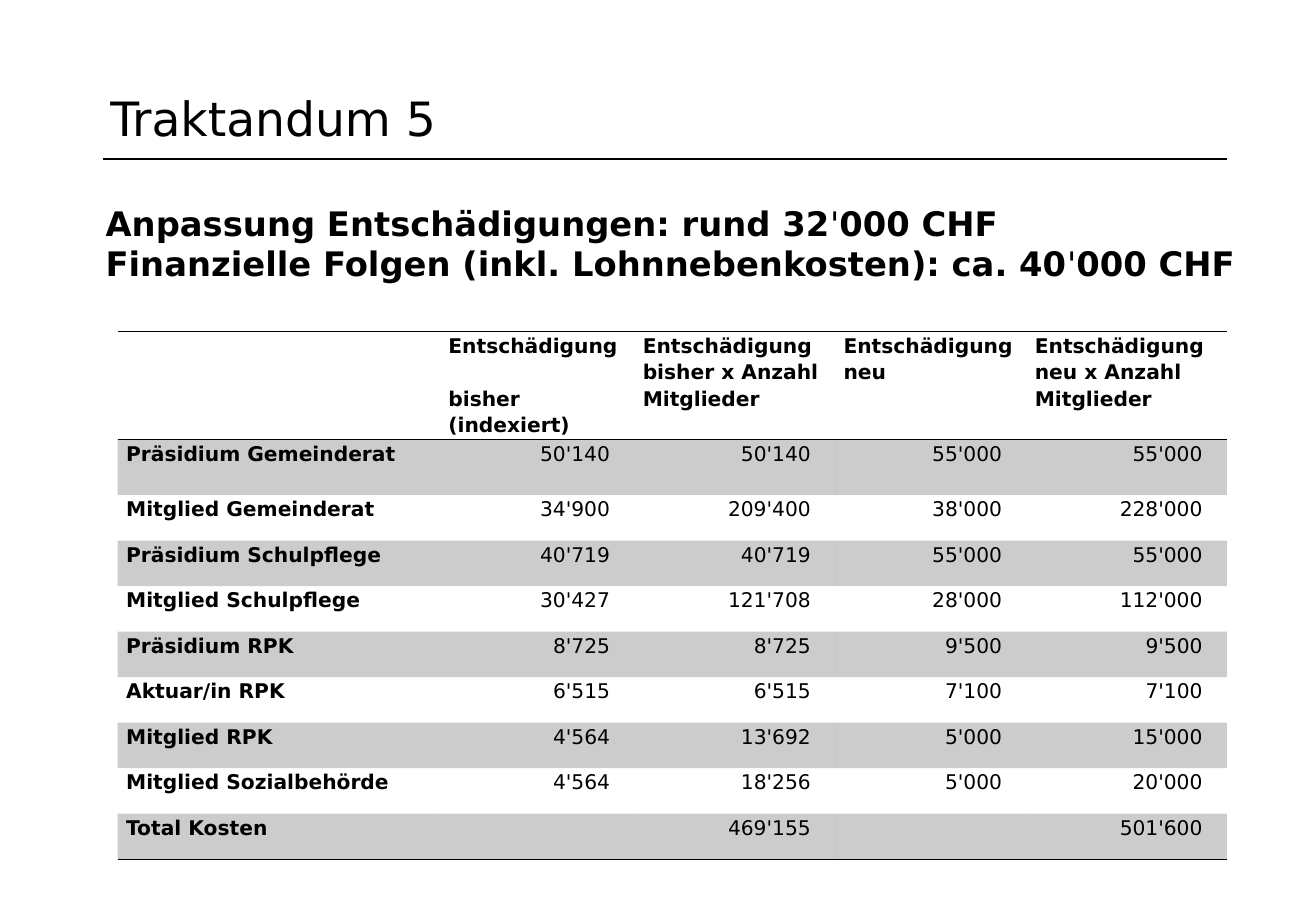
from pptx import Presentation
from pptx.dml.color import RGBColor
from pptx.enum.shapes import MSO_CONNECTOR as CONN
from pptx.enum.text import MSO_ANCHOR as ANCHOR, PP_ALIGN as ALIGN
from pptx.oxml import parse_xml
from pptx.oxml.ns import qn
from pptx.util import Pt
from lxml.etree import SubElement

FONT = "DejaVu Sans"
COLORS = {"ink": "000000", "band": "000000"}
BAND_ALPHA = 20000
NO_STYLE = "{2D5ABB26-0587-4C30-8999-92F81FD0307C}"
NS = "http://schemas.openxmlformats.org/drawingml/2006/main"

COLUMN_WIDTHS = [187.2, 119, 119, 113.4, 118.8]
ROW_HEIGHTS = [62.8, 33] + [27] * 8
HEADERS = [
    [],
    ["Entschädigung", "bisher", "(indexiert)"],
    ["Entschädigung bisher x Anzahl Mitglieder"],
    ["Entschädigung neu"],
    ["Entschädigung neu x Anzahl Mitglieder"],
]
ROWS = [
    ["Präsidium Gemeinderat", "50'140", "50'140", "55'000", "55'000"],
    ["Mitglied Gemeinderat", "34'900", "209'400", "38'000", "228'000"],
    ["Präsidium Schulpflege", "40'719", "40'719", "55'000", "55'000"],
    ["Mitglied Schulpflege", "30'427", "121'708", "28'000", "112'000"],
    ["Präsidium RPK", "8'725", "8'725", "9'500", "9'500"],
    ["Aktuar/in RPK", "6'515", "6'515", "7'100", "7'100"],
    ["Mitglied RPK", "4'564", "13'692", "5'000", "15'000"],
    ["Mitglied Sozialbehörde", "4'564", "18'256", "5'000", "20'000"],
    ["Total Kosten", "", "469'155", "", "501'600"],
]
SUBTITLE = [
    ["Anpassung Entschädigungen: rund 32", "'", "000 CHF"],
    ["Finanzielle Folgen (inkl. Lohnnebenkosten): ca. 40", "'", "000 CHF"],
]


def add_run(p, text, size, bold=False):
    r = p.add_run()
    r.text = text
    r.font.name = FONT
    r.font.size = Pt(size)
    r.font.bold = bold
    r.font.color.rgb = RGBColor.from_string(COLORS["ink"])


def add_text(s, left, top, width, height, lines, size, bold=False, anchor=ANCHOR.TOP):
    """Each line is a list of runs; a lone apostrophe is never bold."""
    tf = s.shapes.add_textbox(Pt(left), Pt(top), Pt(width), Pt(height)).text_frame
    tf.word_wrap = True
    tf.vertical_anchor = anchor
    tf.margin_right = 0
    for i, runs in enumerate(lines):
        p = tf.paragraphs[0] if i == 0 else tf.add_paragraph()
        for text in runs:
            add_run(p, text, size, bold and text != "'")


def add_rule(s, x1, x2, y):
    sp = s.shapes.add_connector(CONN.STRAIGHT, Pt(x1), Pt(y), Pt(x2), Pt(y))
    sp.line.color.rgb = RGBColor.from_string(COLORS["ink"])
    sp.line.width = Pt(0.75)
    SubElement(sp._element.spPr, qn("a:effectLst"))


def add_border(cell, side):
    cell._tc.get_or_add_tcPr().append(parse_xml(
        f'<a:{side} xmlns:a="{NS}" w="{Pt(1)}"><a:solidFill>'
        f'<a:srgbClr val="{COLORS["ink"]}"/></a:solidFill></a:{side}>'))


def fill_cell(cell, banded):
    if not banded:
        cell.fill.background()
        return
    cell.fill.solid()
    cell.fill.fore_color.rgb = RGBColor.from_string(COLORS["band"])
    color = cell._tc.tcPr.find(qn("a:solidFill")).find(qn("a:srgbClr"))
    SubElement(color, qn("a:alpha"), val=str(BAND_ALPHA))


def write_cell(cell, lines, bold, number):
    cell.margin_top = cell.margin_bottom = 0
    cell.margin_left = Pt(8.8 if len(lines) > 1 else 5)
    cell.margin_right = Pt(14.4 if number else 5)
    tf = cell.text_frame
    for i, text in enumerate(lines):
        p = tf.paragraphs[0] if i == 0 else tf.add_paragraph()
        p.line_spacing = 1.12
        p.alignment = ALIGN.RIGHT if number else ALIGN.LEFT
        if i == 1:
            p.space_before = Pt(15.7)
        add_run(p, text, 12, bold)


def add_cost_table(s, left, top):
    rows = [HEADERS] + [[[text] if text else [] for text in row] for row in ROWS]
    table = s.shapes.add_table(
        len(rows), len(COLUMN_WIDTHS), Pt(left), Pt(top),
        Pt(sum(COLUMN_WIDTHS)), Pt(sum(ROW_HEIGHTS))).table
    table.horz_banding = False
    table._tbl.tblPr.find(qn("a:tableStyleId")).text = NO_STYLE
    for column, width in zip(table.columns, COLUMN_WIDTHS):
        column.width = Pt(width)
    for i, (row, height) in enumerate(zip(rows, ROW_HEIGHTS)):
        table.rows[i].height = Pt(height)
        for j, lines in enumerate(row):
            cell = table.cell(i, j)
            write_cell(cell, lines, bold=i == 0 or j == 0, number=i > 0 and j > 0)
            if i == 0:
                add_border(cell, "lnT")
            if i in (0, len(rows) - 1):
                add_border(cell, "lnB")
            fill_cell(cell, banded=i % 2 == 1)


def main():
    prs = Presentation()
    prs.slide_width, prs.slide_height = Pt(780), Pt(540)
    s = prs.slides.add_slide(prs.slide_layouts[6])

    # Title with rule
    add_rule(s, 61.2, 727.2, 94.3)
    add_text(s, 58.3, 49, 457, 41.8, [["Traktandum 5"]], 28, anchor=ANCHOR.MIDDLE)

    # Cost table
    add_cost_table(s, 69.8, 196.4)

    # Summary of the costs
    add_text(s, 55.5, 116.6, 686, 55.4, SUBTITLE, 20, bold=True)

    prs.save("out.pptx")


if __name__ == "__main__":
    main()
